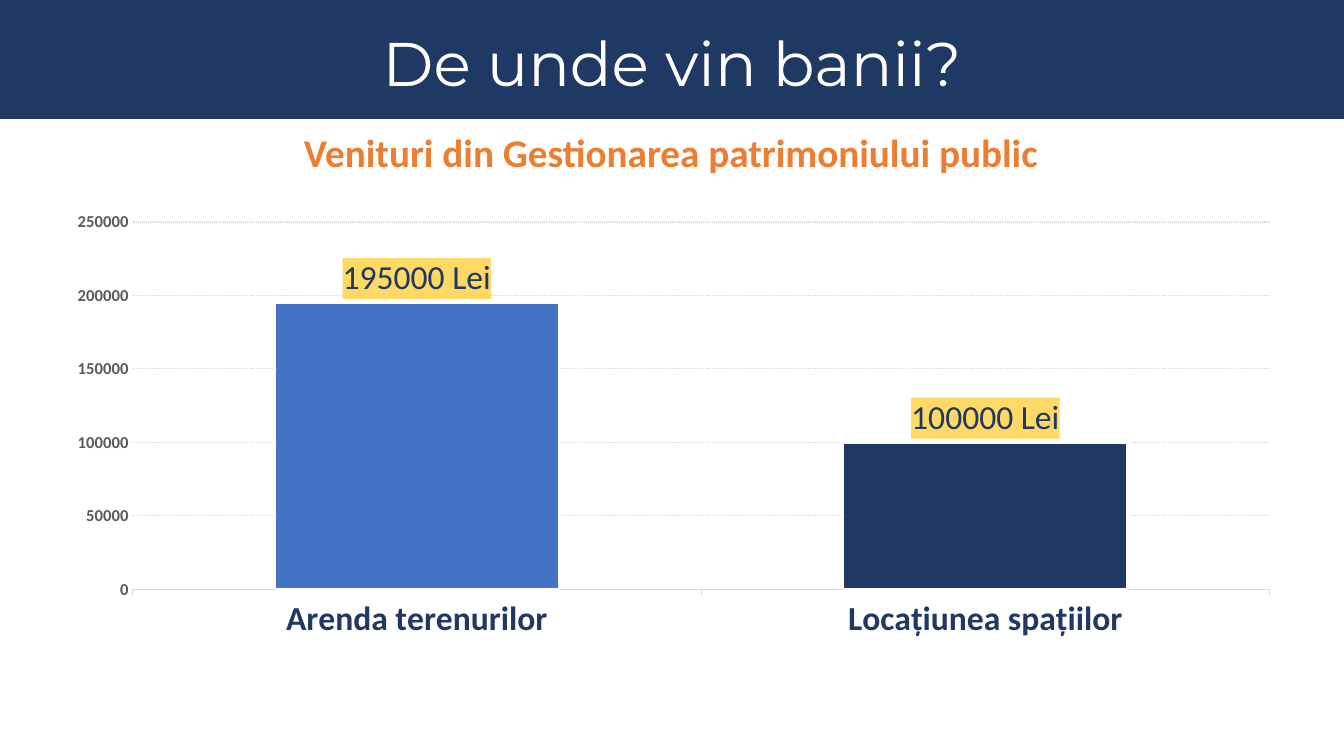
from lxml import etree
from pptx import Presentation
from pptx.chart.data import CategoryChartData
from pptx.dml.color import RGBColor
from pptx.enum import chart as ch, dml, shapes, text
from pptx.oxml import ns
from pptx.util import Cm, Pt

COLORS = {
    "navy": "203864",
    "blue": "4472C4",
    "orange": "ED7D31",
    "yellow": "FFD966",
    "white": "FFFFFF",
    "grid": "D9D9D9",
    "scale": "595959",
}
INCOME = {"Arenda terenurilor": 195000, "Locațiunea spațiilor": 100000}
BAR_COLORS = ["blue", "navy"]
PLOT_AREA = {"x": 0.085, "y": 0.072, "w": 0.882, "h": 0.67}


def rgb(name):
    return RGBColor.from_string(COLORS[name])


def style_font(font, size, color, bold=False, name="Calibri"):
    font.name = name
    font.size = Pt(size)
    font.bold = bold
    font.color.rgb = rgb(color)


def style_line(line, color, width):
    line.color.rgb = rgb(color)
    line.width = Pt(width)


def add_text(slide, wording, left, top, width, height, *, size, color,
             bold=False, font="Calibri", spacing=1.0,
             anchor=text.MSO_ANCHOR.TOP):
    frame = slide.shapes.add_textbox(
        Cm(left), Cm(top), Cm(width), Cm(height)).text_frame
    frame.word_wrap = True
    frame.vertical_anchor = anchor
    paragraph = frame.paragraphs[0]
    paragraph.alignment = text.PP_ALIGN.CENTER
    paragraph.line_spacing = spacing
    run = paragraph.add_run()
    run.text = wording
    style_font(run.font, size, color, bold, font)


def add_band(slide, width, height, color):
    band = slide.shapes.add_shape(
        shapes.MSO_SHAPE.RECTANGLE, 0, 0, width, height)
    band.shadow.inherit = False
    band.fill.solid()
    band.fill.fore_color.rgb = rgb(color)
    band.line.fill.background()


def c_element(parent, tag, **attributes):
    return etree.SubElement(parent, ns.qn(f"c:{tag}"), attributes)


def place_plot(chart):
    """Fix the inner plot area as fractions of the chart frame."""
    plot_area = chart.plots[0]._element.getparent()
    for automatic in plot_area.findall(ns.qn("c:layout")):
        plot_area.remove(automatic)
    layout = c_element(plot_area, "layout")
    plot_area.insert(0, layout)
    manual = c_element(layout, "manualLayout")
    c_element(manual, "layoutTarget", val="inner")
    for side in "xy":
        c_element(manual, f"{side}Mode", val="edge")
    for side, fraction in PLOT_AREA.items():
        c_element(manual, side, val=str(fraction))


def style_axes(chart):
    categories, scale = chart.category_axis, chart.value_axis
    style_font(categories.tick_labels.font, 24, "navy", bold=True)
    style_line(categories.format.line, "grid", 0.75)
    categories.major_tick_mark = ch.XL_TICK_MARK.OUTSIDE

    style_font(scale.tick_labels.font, 11.9, "scale", bold=True)
    scale.tick_labels.number_format = "0"
    scale.tick_labels.number_format_is_linked = False
    scale.minimum_scale, scale.maximum_scale = 0, 250000
    scale.major_unit = 50000
    scale.major_tick_mark = ch.XL_TICK_MARK.NONE
    scale.format.line.fill.background()
    gridline = scale.major_gridlines.format.line
    style_line(gridline, "grid", 0.75)
    gridline.dash_style = dml.MSO_LINE.ROUND_DOT


def style_labels(labels):
    labels.show_value = True
    labels.position = ch.XL_LABEL_POSITION.OUTSIDE_END
    labels.number_format = '0" Lei"'
    labels.number_format_is_linked = False
    style_font(labels.font, 24, "navy")
    background = etree.Element(ns.qn("c:spPr"))
    fill = etree.SubElement(background, ns.qn("a:solidFill"))
    etree.SubElement(fill, ns.qn("a:srgbClr"), val=COLORS["yellow"])
    labels._element.find(ns.qn("c:txPr")).addprevious(background)


def add_income_chart(slide, left, top, width, height):
    data = CategoryChartData(number_format="0")
    data.categories = list(INCOME)
    data.add_series("Venituri", list(INCOME.values()))
    chart = slide.shapes.add_chart(
        ch.XL_CHART_TYPE.COLUMN_CLUSTERED,
        Cm(left), Cm(top), Cm(width), Cm(height), data).chart
    chart.has_legend = False
    chart.has_title = False
    chart.font.name = "Calibri"
    chart.font.size = Pt(10)
    place_plot(chart)
    style_axes(chart)

    columns = chart.plots[0]
    columns.gap_width = 100
    columns.vary_by_categories = False
    income = columns.series[0]
    for index, color in enumerate(BAR_COLORS):
        bar = income.points[index].format
        bar.fill.solid()
        bar.fill.fore_color.rgb = rgb(color)
        style_line(bar.line, "white", 1.5)
    style_labels(income.data_labels)


def main():
    deck = Presentation()
    deck.slide_width, deck.slide_height = Cm(33.87), Cm(19.05)
    slide = deck.slides.add_slide(deck.slide_layouts[6])

    add_income_chart(slide, 0.58, 4.6, 32.49, 13.82)
    add_band(slide, deck.slide_width, Cm(3), "navy")
    add_text(slide, "De unde vin banii?", 0.43, 0.64, 33.02, 2.06,
             size=44, color="white", font="Montserrat", spacing=0.9,
             anchor=text.MSO_ANCHOR.MIDDLE)
    add_text(slide, "Venituri din Gestionarea patrimoniului public",
             0.47, 3.12, 32.87, 1.45, size=28, color="orange", bold=True)
    deck.save("out.pptx")


if __name__ == "__main__":
    main()
